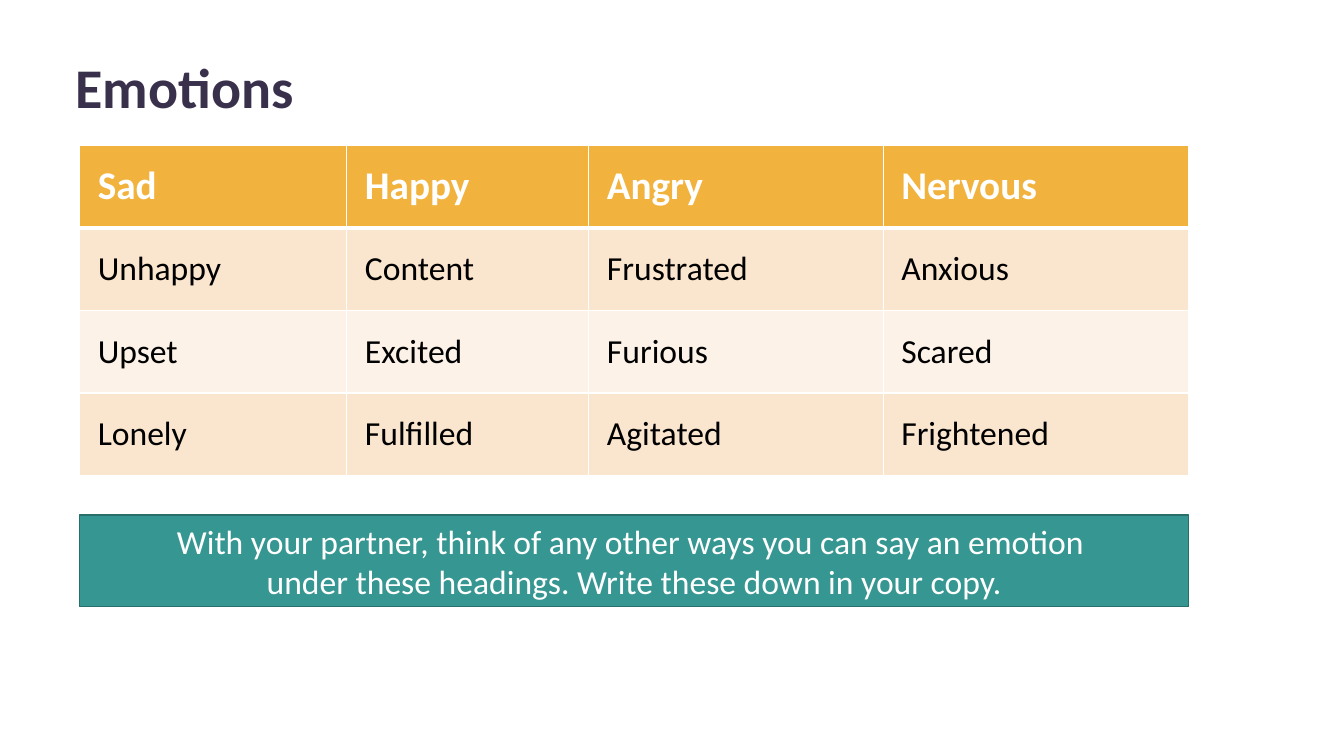
from lxml import etree
from pptx import Presentation
from pptx.dml.color import RGBColor
from pptx.enum.shapes import MSO_SHAPE
from pptx.enum.text import MSO_ANCHOR, PP_ALIGN
from pptx.oxml.ns import qn
from pptx.util import Inches, Pt

RECT = MSO_SHAPE.RECTANGLE
MIDDLE = MSO_ANCHOR.MIDDLE
LEFT, CENTER = PP_ALIGN.LEFT, PP_ALIGN.CENTER

TITLE = "Emotions"
WORDS = [
    ("Sad", "Happy", "Angry", "Nervous"),
    ("Unhappy", "Content", "Frustrated", "Anxious"),
    ("Upset", "Excited", "Furious", "Scared"),
    ("Lonely", "Fulfilled", "Agitated", "Frightened"),
]
TASK = ("With your partner, think of any other ways you can say an emotion \n"
        "under these headings. Write these down in your copy.")

THEME = {
    "font": "Calibri",
    "title": "39304C", "white": "FFFFFF", "black": "000000",
    "head": "F2B33E", "bands": ("FCF2E8", "FAE5CE"),
    "task": "369691", "edge": "286F6B",
    "big": 40, "mid": 28, "small": 24,
}

X, WIDE = 0.79, 11
COLS = (2.65, 2.4, 2.92, 3.03)
ROW = 0.82
PAD_X, PAD_Y = 0.18, 0.09


def color(name):
    return RGBColor.from_string(name)


def write(frame, text, size, ink, bold=False, align=LEFT):
    par = frame.paragraphs[0]
    par.text = text
    par.alignment = align
    par.font.name = THEME["font"]
    par.font.size = Pt(size)
    par.font.bold = bold
    par.font.color.rgb = color(ink)
    return par


def border(cell, sides):
    props = cell._tc.get_or_add_tcPr()
    for spot, (side, width) in enumerate(sides):
        line = etree.Element(qn("a:" + side), w=str(Pt(width)))
        fill = etree.SubElement(line, qn("a:solidFill"))
        etree.SubElement(fill, qn("a:srgbClr"), val=THEME["white"])
        props.insert(spot, line)


def add_title(slide):
    box = slide.shapes.add_textbox(Inches(0.65), Inches(0.56), Inches(11.5), Inches(0.68))
    frame = box.text_frame
    frame.word_wrap = True
    frame.vertical_anchor = MIDDLE
    write(frame, TITLE, THEME["big"], THEME["title"], True).line_spacing = 0.9


def add_words(slide):
    count = len(WORDS)
    table = slide.shapes.add_table(count, len(COLS), Inches(X), Inches(1.44),
                                   Inches(WIDE), Inches(ROW * count)).table
    for col, width in zip(table.columns, COLS):
        col.width = Inches(width)
    for r, row in enumerate(WORDS):
        table.rows[r].height = Inches(ROW)
        head = r == 0
        back = THEME["head"] if head else THEME["bands"][r % 2]
        ink = THEME["white" if head else "black"]
        size = THEME["mid" if head else "small"]
        for c, word in enumerate(row):
            cell = table.cell(r, c)
            cell.margin_left = cell.margin_right = Inches(PAD_X)
            cell.margin_top = cell.margin_bottom = Inches(PAD_Y)
            cell.vertical_anchor = MIDDLE
            cell.fill.solid()
            cell.fill.fore_color.rgb = color(back)
            border(cell, (("lnL", 1), ("lnR", 1), ("lnT", 3 if r == 1 else 1),
                          ("lnB", 3 if head else 1)))
            write(cell.text_frame, word, size, ink, head)


def add_task(slide):
    box = slide.shapes.add_shape(RECT, Inches(X), Inches(5.11), Inches(WIDE), Inches(0.91))
    box.shadow.inherit = False
    box.fill.solid()
    box.fill.fore_color.rgb = color(THEME["task"])
    box.line.color.rgb = color(THEME["edge"])
    box.line.width = Pt(1)
    frame = box.text_frame
    frame.word_wrap = True
    frame.vertical_anchor = MIDDLE
    write(frame, TASK, THEME["small"], THEME["white"], align=CENTER)


def main():
    deck = Presentation()
    deck.slide_width, deck.slide_height = Inches(13.33), Inches(7.5)
    slide = deck.slides.add_slide(deck.slide_layouts[6])
    add_title(slide)
    add_words(slide)
    add_task(slide)
    deck.save("out.pptx")


if __name__ == "__main__":
    main()
